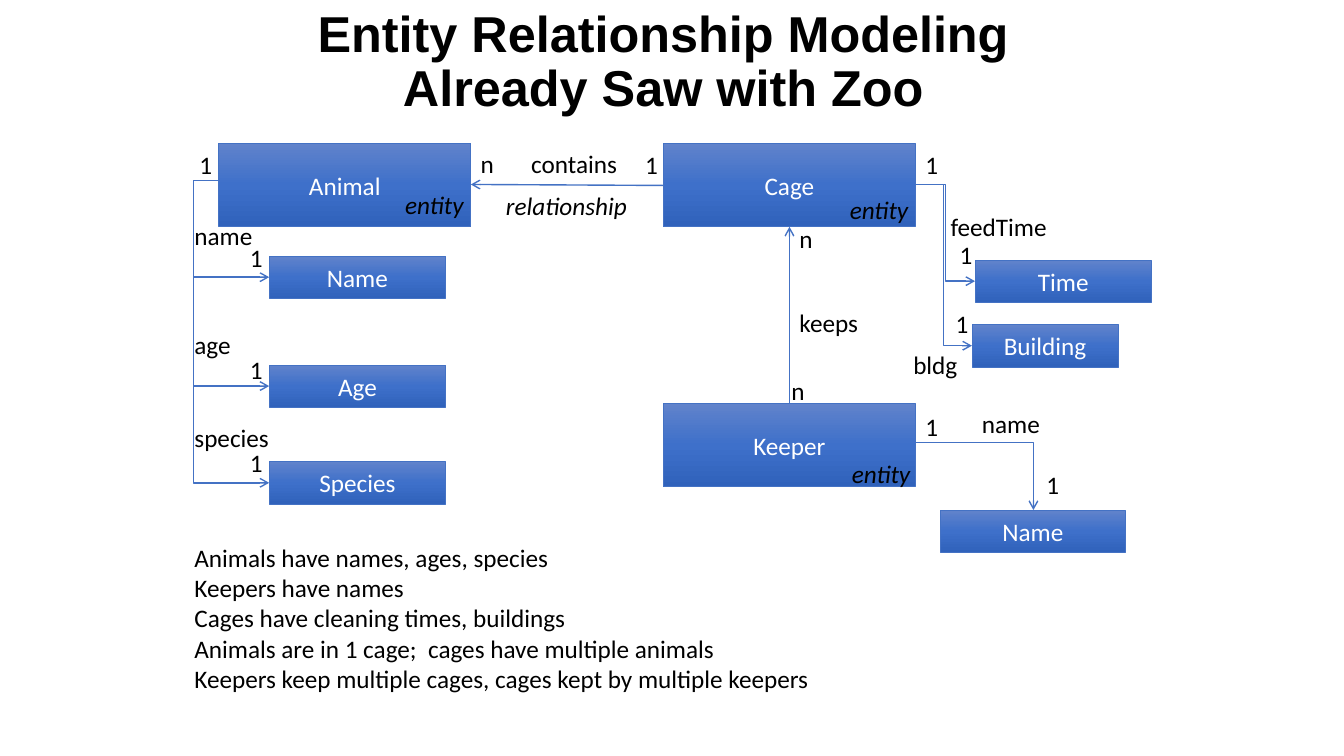
from copy import deepcopy

from lxml import etree
from pptx import Presentation
from pptx.dml.color import RGBColor
from pptx.enum.shapes import MSO_CONNECTOR, MSO_SHAPE
from pptx.enum.text import MSO_ANCHOR, MSO_AUTO_SIZE, PP_ALIGN
from pptx.oxml.ns import qn
from pptx.util import Inches, Pt

RECTANGLE = MSO_SHAPE.RECTANGLE
STRAIGHT, ELBOW = MSO_CONNECTOR.STRAIGHT, MSO_CONNECTOR.ELBOW
LEFT, CENTER = PP_ALIGN.LEFT, PP_ALIGN.CENTER
MIDDLE = MSO_ANCHOR.MIDDLE

BLACK = RGBColor(0x00, 0x00, 0x00)
WHITE = RGBColor(0xFF, 0xFF, 0xFF)
BLUE = RGBColor(0x44, 0x72, 0xC4)
GRADIENT = [
    (0, RGBColor(0x61, 0x83, 0xCB)),
    (0.5, RGBColor(0x3E, 0x70, 0xCA)),
    (1, RGBColor(0x30, 0x62, 0xBB)),
]

# Shared edges of the diagram, in inches
ANIMAL_X, CAGE_X = 2.17, 6.58
ENTITY_W, ENTITY_H = 2.5, 0.83
ENTITY_Y, KEEPER_Y = 1.42, 4
ANIMAL_RIGHT, CAGE_RIGHT = ANIMAL_X + ENTITY_W, CAGE_X + ENTITY_W
CAGE_MIDDLE = CAGE_X + ENTITY_W / 2
ATTRIBUTE_X, ATTRIBUTE_W, ATTRIBUTE_H = 2.67, 1.75, 0.42
LABEL_X, LABEL_H, DIGIT_W = 1.83, 0.4, 0.33
ANIMAL_ATTRIBUTES = [("Name", 2.54), ("Age", 3.62), ("Species", 4.58)]


def write(text_frame, text, size=18, color=BLACK, font="Calibri",
          bold=False, italic=False, align=LEFT, spacing=None):
    text_frame.text = text
    for paragraph in text_frame.paragraphs:
        paragraph.alignment = align
        paragraph.line_spacing = spacing
        for run in paragraph.runs:
            run.font.size = Pt(size)
            run.font.name = font
            run.font.bold = bold
            run.font.italic = italic
            run.font.color.rgb = color


presentation = Presentation()
presentation.slide_width = Inches(13.33)
presentation.slide_height = Inches(7.5)
slide = presentation.slides.add_slide(presentation.slide_layouts[5])

# Title
title = slide.shapes.title
title.left, title.top = Inches(2.08), 0
title.width, title.height = Inches(9), Inches(1.25)
title.text_frame.auto_size = MSO_AUTO_SIZE.NONE
title.text_frame.vertical_anchor = MIDDLE
write(title.text_frame, "Entity Relationship Modeling\vAlready Saw with Zoo",
      size=36, font="Arial", bold=True, align=CENTER, spacing=0.9)

# Entities and their attributes: text, left, top, width, height
boxes = [
    ("Animal", ANIMAL_X, ENTITY_Y, ENTITY_W, ENTITY_H),
    ("Cage", CAGE_X, ENTITY_Y, ENTITY_W, ENTITY_H),
    ("Keeper", CAGE_X, KEEPER_Y, ENTITY_W, ENTITY_H),
    ("Name", 9.33, 5.06, 1.83, ATTRIBUTE_H),
    ("Time", 9.67, 2.58, ATTRIBUTE_W, ATTRIBUTE_H),
    ("Building", 9.64, 3.22, 1.45, ATTRIBUTE_H),
]
for name, top in ANIMAL_ATTRIBUTES:
    boxes.append((name, ATTRIBUTE_X, top, ATTRIBUTE_W, ATTRIBUTE_H))

for name, *place in boxes:
    box = slide.shapes.add_shape(RECTANGLE, *map(Inches, place))
    box.shadow.inherit = False
    box.fill.gradient()
    box.fill.gradient_angle = 270
    first_stop = box._element.spPr.find(".//" + qn("a:gs"))
    first_stop.addnext(deepcopy(first_stop))
    for stop, (position, color) in zip(box.fill.gradient_stops, GRADIENT):
        stop.position = position
        stop.color.rgb = color
    box.line.color.rgb = BLUE
    box.line.width = Pt(0.5)
    box.text_frame.vertical_anchor = MIDDLE
    write(box.text_frame, name, color=WHITE, align=CENTER)

# Arrows: kind, start, end, preset, position of the bend
arrows = [
    (STRAIGHT, (CAGE_X, 1.84), (ANIMAL_RIGHT, 1.83), "line", None),
    (STRAIGHT, (CAGE_MIDDLE, KEEPER_Y), (CAGE_MIDDLE, 2.25), "line", None),
    (ELBOW, (CAGE_RIGHT, 4.39), (10.25, 5.06), "bentConnector2", None),
    (ELBOW, (CAGE_RIGHT, 1.83), (9.67, 2.79), "bentConnector3", 0.5),
    (ELBOW, (CAGE_RIGHT, 1.83), (9.64, 3.43), "bentConnector3", 0.5),
]
for name, top in ANIMAL_ATTRIBUTES:
    arrows.append((ELBOW, (ANIMAL_X, 1.79),
                   (ATTRIBUTE_X, top + ATTRIBUTE_H / 2), "bentConnector3", -0.5))

for kind, start, end, preset, bend in arrows:
    arrow = slide.shapes.add_connector(kind, *map(Inches, start + end))
    arrow.line.color.rgb = BLUE
    arrow.line.width = Pt(1)
    properties = arrow._element.spPr
    geometry = properties.find(qn("a:prstGeom"))
    geometry.set("prst", preset)
    if bend is not None:
        guide = etree.SubElement(geometry.find(qn("a:avLst")), qn("a:gd"))
        guide.set("name", "adj1")
        guide.set("fmla", f"val {round(bend * 100000)}")
    etree.SubElement(properties.find(qn("a:ln")), qn("a:tailEnd")).set("type", "arrow")
    etree.SubElement(properties, qn("a:effectLst"))

# Labels on one line: text, left, top, width
labels = [
    ("contains", 5.17, 1.42, 1.06),
    ("keeps", CAGE_MIDDLE, 3, 0.79),
    ("name", 9.64, 4, 0.78),
    ("feedTime", 9.33, 2.05, 1.16),
    ("bldg", 8.96, 3.42, 0.64),
    ("name", LABEL_X, 2.14, 0.78),
    ("age", LABEL_X, 3.22, 0.57),
    ("species", LABEL_X, 4.14, 0.95),
]
# Cardinalities
ones = [(1.88, 1.43), (6.3, 1.43), (CAGE_RIGHT, 1.43), (CAGE_RIGHT, 4.03),
        (10.28, 4.61), (9.42, 2.33), (9.38, 3.01),
        (2.38, 2.35), (2.38, 3.47), (2.38, 4.39)]
manys = [(ANIMAL_RIGHT, 1.42), (CAGE_MIDDLE, 2.17), (7.75, 3.67)]
labels += [("1", left, top, DIGIT_W) for left, top in ones]
labels += [("n", left, top, 0.34) for left, top in manys]

# Kinds of parts, in italics
kinds = [
    ("entity", 3.92, 1.83, 0.9),
    ("entity", 8.33, 1.88, 0.83),
    ("entity", 8.35, 4.5, 1.4),
    ("relationship", 4.92, 1.84, 1.58),
]

# Summary of the model
summary = """Animals have names, ages, species
Keepers have names
Cages have cleaning times, buildings
Animals are in 1 cage;  cages have multiple animals
Keepers keep multiple cages, cages kept by multiple keepers"""

texts = [(*label, LABEL_H, False, False) for label in labels]
texts += [(*kind, LABEL_H, True, True) for kind in kinds]
texts.append((summary, LABEL_X, 5.33, 8.43, 1.62, True, False))
for text, left, top, width, height, wrap, italic in texts:
    text_box = slide.shapes.add_textbox(*map(Inches, (left, top, width, height)))
    text_box.text_frame.word_wrap = wrap
    text_box.text_frame.auto_size = MSO_AUTO_SIZE.SHAPE_TO_FIT_TEXT
    write(text_box.text_frame, text, italic=italic)

presentation.save("out.pptx")
